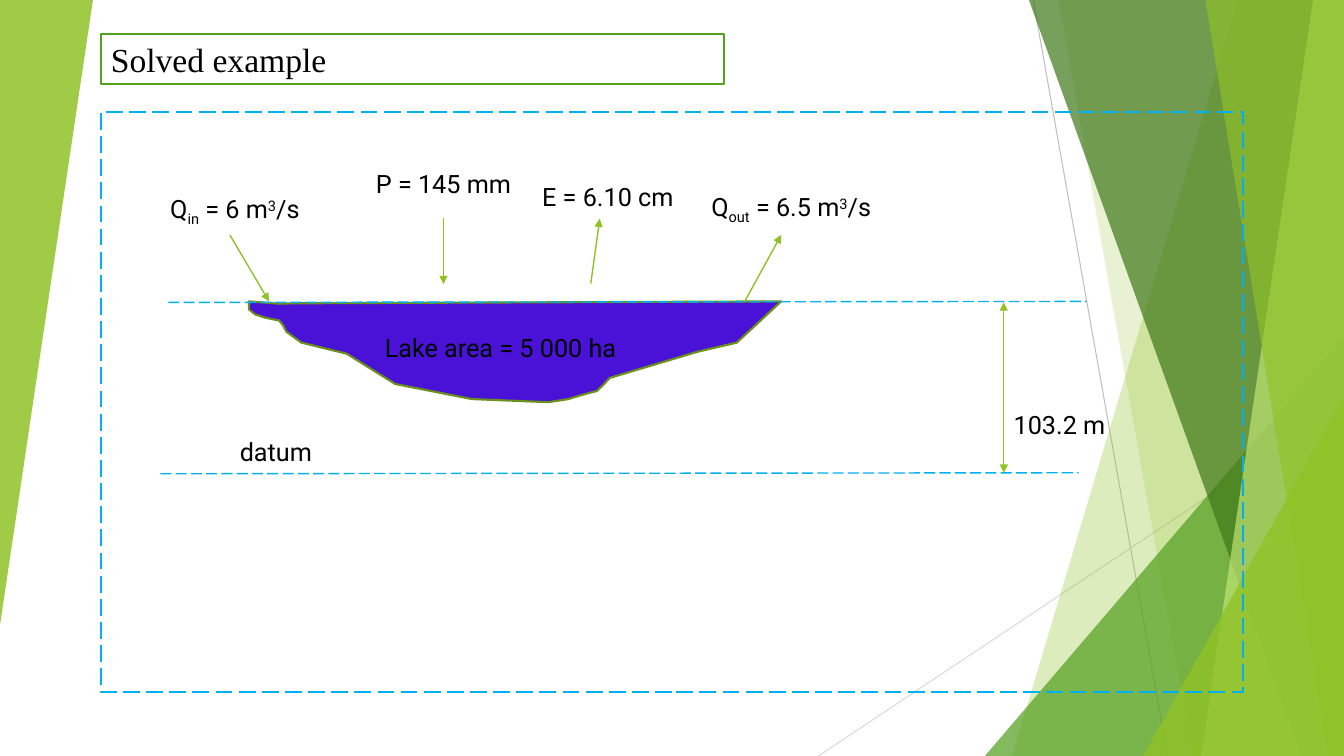
from dataclasses import dataclass

from lxml import etree
from pptx import Presentation
from pptx import util as u
from pptx.dml.color import RGBColor
from pptx.enum import dml, shapes, text
from pptx.oxml.ns import qn


@dataclass(frozen=True)
class Theme:
    lime: str = "90C226"
    green: str = "54A021"
    forest: str = "3F7819"
    pale: str = "C0E474"
    olive: str = "6B901C"
    sky: str = "00B0F0"
    lake: str = "4A12D6"
    grey: str = "BFBFBF"
    light_grey: str = "D9D9D9"
    white: str = "FFFFFF"
    ink: str = "000000"
    title_font: str = "Times New Roman"
    body_font: str = "Roboto"
    title_size: int = 24
    body_size: int = 18


THEME = Theme()
WIDTH, HEIGHT = 960, 540
LAKE = [
    (210.2, 216.7), (558, 215.3), (526.3, 244.8), (498.2, 251.3),
    (435.6, 270), (430.5, 275.5), (426.2, 279.4), (420.5, 280.8),
    (410.4, 283.7), (406.1, 285.1), (391.7, 287.3), (337, 285.1),
    (282.2, 274.3), (247.7, 252.7), (215.3, 244.8), (204.5, 236.9),
    (202.3, 232.6), (199.4, 229), (189.5, 227), (182.2, 224.6),
    (177.8, 221), (177.8, 215.3), (199, 217),
]


def box(*lengths):
    return [u.Pt(v) for v in lengths]


def paint(s, color, opacity=100):
    s.shadow.inherit = False
    s.fill.solid()
    s.fill.fore_color.rgb = RGBColor.from_string(color)
    s.line.fill.background()
    if opacity < 100:
        clr = s._element.spPr.find(".//" + qn("a:srgbClr"))
        etree.SubElement(clr, qn("a:alpha"), val=str(opacity * 1000))


def outline(s, color, width, dashed=False):
    s.line.color.rgb = RGBColor.from_string(color)
    s.line.width = u.Pt(width)
    if dashed:
        s.line.dash_style = dml.MSO_LINE.LONG_DASH


def add_polygon(slide, points, color, opacity=100):
    start, *rest = [box(*p) for p in points]
    builder = slide.shapes.build_freeform(*start, scale=1.0)
    builder.add_line_segments(rest, close=True)
    s = builder.convert_to_shape()
    paint(s, color, opacity)
    return s


def add_facet(slide, top_x, bottom_x, color, opacity):
    points = [(top_x, 0), (WIDTH, 0), (WIDTH, HEIGHT), (bottom_x, HEIGHT)]
    add_polygon(slide, points, color, opacity)


def add_triangle(slide, x, y, w, h, color, opacity, rotation=0):
    s = slide.shapes.add_shape(
        shapes.MSO_SHAPE.ISOSCELES_TRIANGLE, *box(x, y, w, h))
    s.adjustments[0] = 1
    s.rotation = rotation
    paint(s, color, opacity)


def add_line(slide, ends, color, width=1, dashed=False, arrows=()):
    s = slide.shapes.add_connector(
        shapes.MSO_CONNECTOR.STRAIGHT, *box(*ends))
    outline(s, color, width, dashed)
    for end in arrows:
        etree.SubElement(s.line._get_or_add_ln(), qn(end), type="triangle")
    etree.SubElement(s._element.spPr, qn("a:effectLst"))


def style_run(r, font, size):
    r.font.name = font
    r.font.size = u.Pt(size)
    r.font.color.rgb = RGBColor.from_string(THEME.ink)


def add_label(slide, x, y, w, runs, centred=False):
    tf = slide.shapes.add_textbox(*box(x, y, w, 29)).text_frame
    tf.word_wrap = True
    p = tf.paragraphs[0]
    if centred:
        p.alignment = text.PP_ALIGN.CENTER
    for words, baseline in runs:
        r = p.add_run()
        r.text = words
        style_run(r, THEME.body_font, THEME.body_size)
        if baseline:
            r._r.get_or_add_rPr().set("baseline", str(baseline * 1000))


def flow(place, rate):
    return [("Q", 0), (place, -25), (f" = {rate} m", 0), ("3", 30), ("/s", 0)]


def add_title(slide, words):
    s = slide.shapes.title
    s.left, s.top, s.width, s.height = box(72, 24, 445, 36)
    paint(s, THEME.white)
    outline(s, THEME.green, 1.5)
    tf = s.text_frame
    tf.text = words
    tf.auto_size = text.MSO_AUTO_SIZE.NONE
    tf.vertical_anchor = text.MSO_ANCHOR.MIDDLE
    p = tf.paragraphs[0]
    p.alignment = text.PP_ALIGN.LEFT
    style_run(p.runs[0], THEME.title_font, THEME.title_size)


def add_backdrop(slide):
    add_line(slide, (738, 0, 834, 540), THEME.grey, 0.75)
    add_line(slide, (960, 290, 584.6, 540), THEME.light_grey, 0.75)
    add_facet(slide, 884, 723, THEME.lime, 30)
    add_facet(slide, 756, 852, THEME.lime, 20)
    add_triangle(slide, 703.5, 240, 256.5, 300, THEME.green, 72)
    add_facet(slide, 735, 929.5, THEME.forest, 70)
    add_facet(slide, 938, 858, THEME.pale, 70)
    add_facet(slide, 861, 949, THEME.lime, 65)
    add_triangle(slide, 816.5, 283, 143.5, 257, THEME.lime, 80)
    add_triangle(slide, 0, 0, 66.4, 446.4, THEME.lime, 85, 180)


def add_frame(slide):
    s = slide.shapes.add_shape(
        shapes.MSO_SHAPE.RECTANGLE, *box(72, 80, 816, 414.5))
    s.shadow.inherit = False
    s.fill.background()
    outline(s, THEME.sky, 1.5, dashed=True)


def add_lake_diagram(slide):
    outline(add_polygon(slide, LAKE, THEME.lake), THEME.olive, 1.5)
    for level in ((120.2, 216, 776.2, 215.3), (114.5, 338.4, 770.4, 337.7)):
        add_line(slide, level, THEME.sky, dashed=True)
    add_line(slide, (717, 216, 717, 337.7), THEME.lime,
             arrows=("a:headEnd", "a:tailEnd"))
    for ends in (
        (164.2, 167.8, 192.2, 215.3),
        (532, 215.3, 558, 167.8),
        (316.8, 155.5, 316.8, 203),
        (422, 202.5, 428.4, 156.2),
    ):
        add_line(slide, ends, THEME.lime, arrows=("a:tailEnd",))
    add_label(slide, 164.2, 308.2, 72, [("datum", 0)])
    add_label(slide, 717, 288.7, 86.4, [("103.2 m", 0)])
    add_label(slide, 114.5, 134.6, 122.4, flow("in", "6"))
    add_label(slide, 501, 133.2, 149, flow("out", "6.5"))
    add_label(slide, 255.6, 116.6, 122.4, [("P = 145 mm", 0)], True)
    add_label(slide, 373, 126, 122.4, [("E = 6.10 cm", 0)], True)
    add_label(slide, 267.8, 234, 249, [("Lake area = 5 000 ha", 0)])


def main():
    prs = Presentation()
    prs.slide_width, prs.slide_height = box(WIDTH, HEIGHT)
    slide = prs.slides.add_slide(prs.slide_layouts[5])
    add_backdrop(slide)
    add_title(slide, "Solved example")
    add_frame(slide)
    add_lake_diagram(slide)
    prs.save("out.pptx")


if __name__ == "__main__":
    main()
